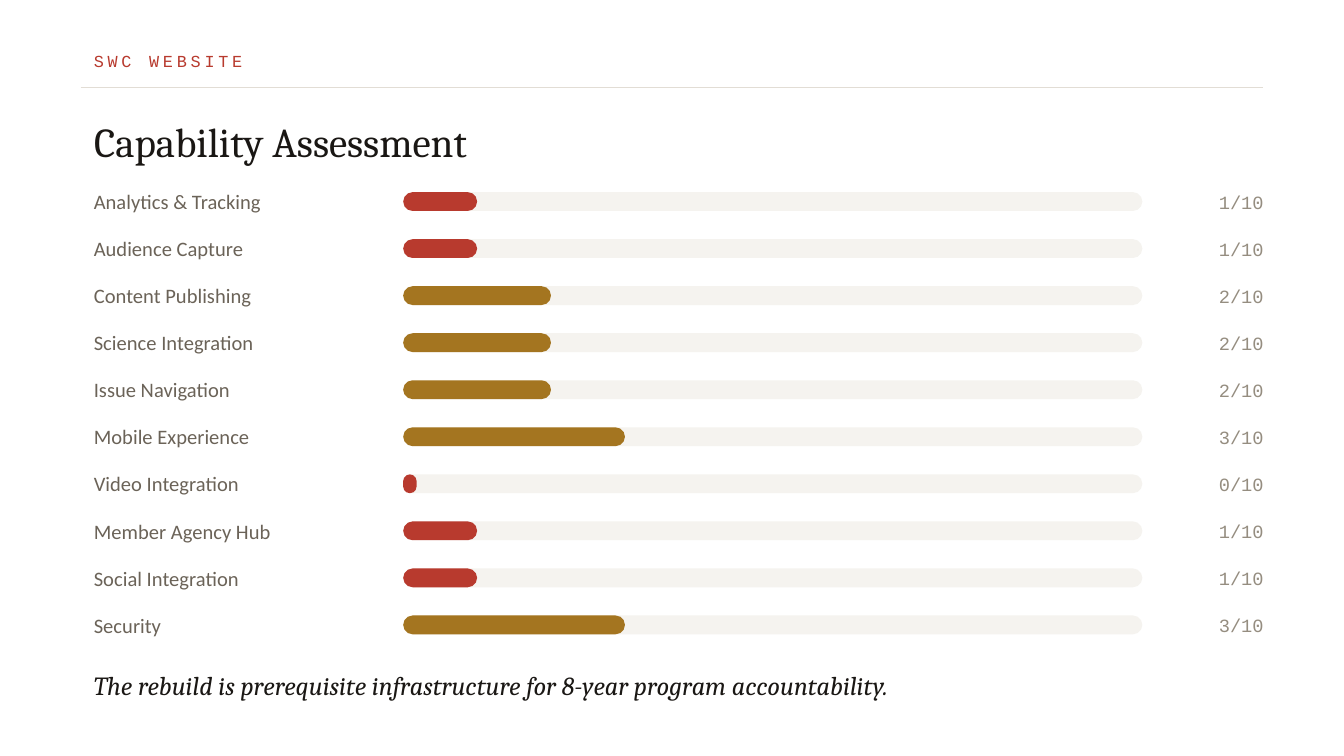
from lxml import etree
from pptx import Presentation
from pptx.dml.color import RGBColor
from pptx.enum.shapes import MSO_CONNECTOR, MSO_SHAPE
from pptx.enum.text import MSO_ANCHOR, MSO_AUTO_SIZE, PP_ALIGN
from pptx.oxml.ns import qn
from pptx.util import Inches, Pt

ROUNDED = MSO_SHAPE.ROUNDED_RECTANGLE
STRAIGHT = MSO_CONNECTOR.STRAIGHT
MIDDLE = MSO_ANCHOR.MIDDLE
NO_FIT = MSO_AUTO_SIZE.NONE
LEFT, RIGHT = PP_ALIGN.LEFT, PP_ALIGN.RIGHT

RED = RGBColor(0xB8, 0x3A, 0x2E)
OCHRE = RGBColor(0xA4, 0x75, 0x20)
INK = RGBColor(0x1A, 0x17, 0x14)
LABEL = RGBColor(0x6B, 0x63, 0x58)
MUTED = RGBColor(0x95, 0x8D, 0x80)
TRACK = RGBColor(0xF5, 0xF3, 0xEF)
RULE = RGBColor(0xE2, 0xDD, 0xD5)

SERIF, SANS, MONO = "Cambria", "Calibri", "Courier New"

SLIDE_W = 10
SLIDE_H = SLIDE_W * 9 / 16
MARGIN = 0.6
CONTENT_W = 8.8
ROW_TOP, ROW_STEP, ROW_H = 1.35, 0.35, 0.3
BAR_X, BAR_W, BAR_H = 3, 5.5, 0.14
MIN_FILL_W = 0.1
MAX_SCORE = 10

SCORES = [
    ("Analytics & Tracking", 1),
    ("Audience Capture", 1),
    ("Content Publishing", 2),
    ("Science Integration", 2),
    ("Issue Navigation", 2),
    ("Mobile Experience", 3),
    ("Video Integration", 0),
    ("Member Agency Hub", 1),
    ("Social Integration", 1),
    ("Security", 3),
]


def write_text(sp, text, *, size, font, color, align=LEFT, italic=False, spacing=None):
    """Fill a text box or placeholder with one formatted run."""
    tf = sp.text_frame
    tf.word_wrap = True
    tf.auto_size = NO_FIT
    tf.vertical_anchor = MIDDLE
    p = tf.paragraphs[0]
    p.alignment = align
    r = p.add_run()
    r.text = text
    r.font.size = Pt(size)
    r.font.name = font
    r.font.italic = italic
    r.font.color.rgb = color
    if spacing is not None:
        r.font._element.set("spc", str(int(spacing * 100)))


def add_text(s, x, y, w, h, text, **fmt):
    sp = s.shapes.add_textbox(Inches(x), Inches(y), Inches(w), Inches(h))
    write_text(sp, text, **fmt)


def add_title(s, x, y, w, h, text, **fmt):
    sp = s.shapes.title
    sp.left, sp.top, sp.width, sp.height = (Inches(v) for v in (x, y, w, h))
    write_text(sp, text, **fmt)


def add_rule(s, x1, x2, y):
    line = s.shapes.add_connector(STRAIGHT, Inches(x1), Inches(y), Inches(x2), Inches(y))
    line.line.color.rgb = RULE
    line.line.width = Pt(0.5)
    etree.SubElement(line._element.spPr, qn("a:effectLst"))


def add_bar(s, y, w, color):
    sp = s.shapes.add_shape(ROUNDED, Inches(BAR_X), Inches(y), Inches(w), Inches(BAR_H))
    sp.adjustments[0] = 0.5
    sp.shadow.inherit = False
    sp.fill.solid()
    sp.fill.fore_color.rgb = color
    sp.line.fill.background()


def add_score_row(s, y, name, score):
    """Label, track with its filled part, and score."""
    bar_y = y + (ROW_H - BAR_H) / 2
    fill_w = max(BAR_W * score / MAX_SCORE, MIN_FILL_W)
    add_text(s, MARGIN, y, 2.2, ROW_H, name, size=11, font=SANS, color=LABEL)
    add_bar(s, bar_y, BAR_W, TRACK)
    add_bar(s, bar_y, fill_w, OCHRE if score >= 2 else RED)
    add_text(s, 8.7, y, 0.8, ROW_H, f"{score}/{MAX_SCORE}",
             size=10, font=MONO, color=MUTED, align=RIGHT)


def main():
    prs = Presentation()
    prs.slide_width, prs.slide_height = Inches(SLIDE_W), Inches(SLIDE_H)
    s = prs.slides.add_slide(prs.slide_layouts[5])

    # Header
    add_text(s, MARGIN, 0.3, CONTENT_W, 0.3, "SWC WEBSITE",
             size=9, font=MONO, color=RED, spacing=2)
    add_rule(s, MARGIN, MARGIN + CONTENT_W, 0.65)
    add_title(s, MARGIN, 0.8, CONTENT_W, 0.5, "Capability Assessment",
              size=22, font=SERIF, color=INK)

    # Score bars
    for i, (name, score) in enumerate(SCORES):
        add_score_row(s, ROW_TOP + i * ROW_STEP, name, score)

    # Conclusion
    add_text(s, MARGIN, 4.95, 6.95, 0.3,
             "The rebuild is prerequisite infrastructure for 8-year program accountability.",
             size=14, font=SERIF, color=INK, italic=True)

    prs.save("out.pptx")


if __name__ == "__main__":
    main()
